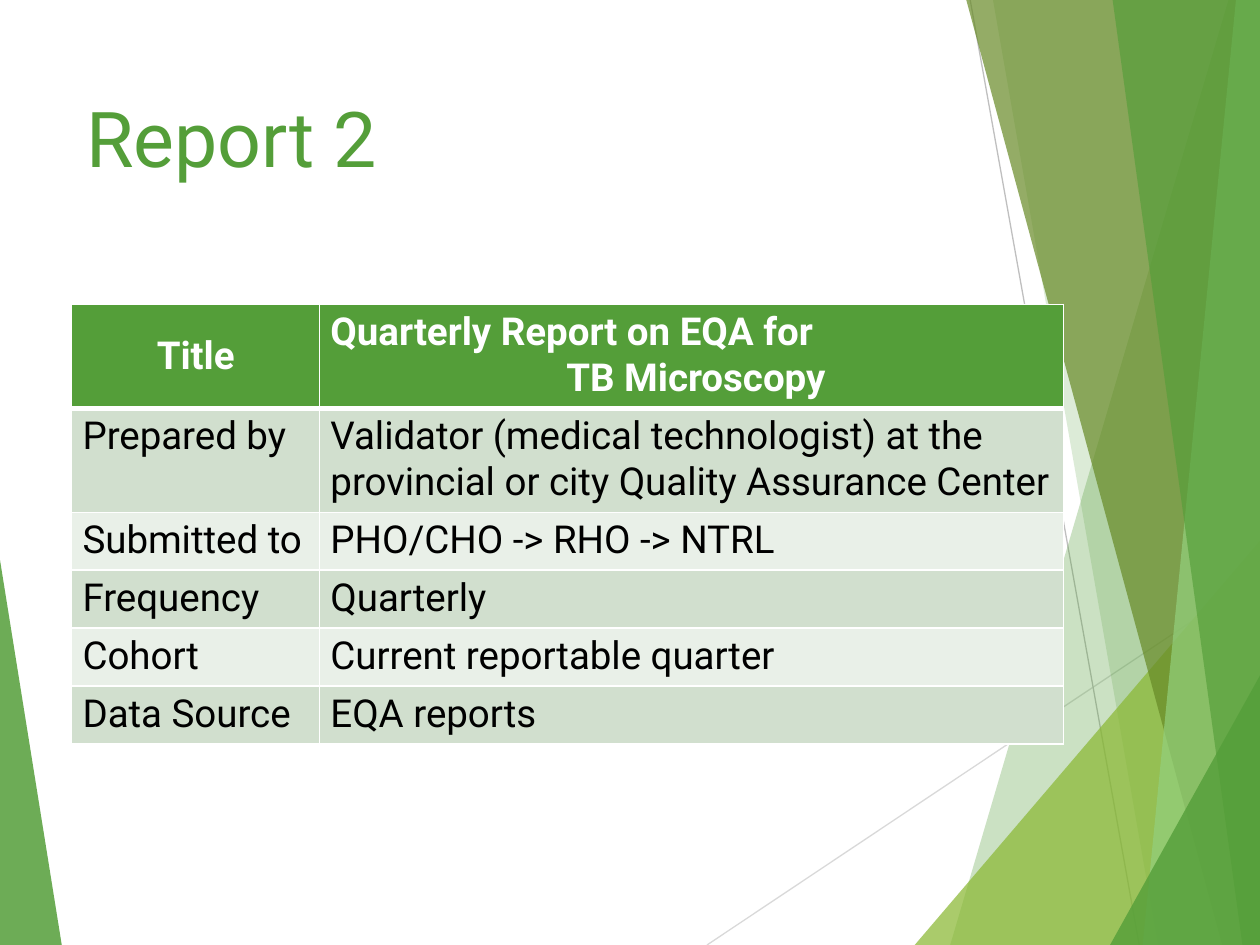
from dataclasses import dataclass

from lxml import etree
from pptx import Presentation
from pptx.dml.color import RGBColor
from pptx.enum.shapes import MSO_CONNECTOR
from pptx.enum.text import MSO_ANCHOR, PP_ALIGN
from pptx.oxml.ns import qn
from pptx.util import Pt

STRAIGHT = MSO_CONNECTOR.STRAIGHT
MIDDLE, TOP = MSO_ANCHOR.MIDDLE, MSO_ANCHOR.TOP
LEFT, CENTER = PP_ALIGN.LEFT, PP_ALIGN.CENTER
WIDTH, HEIGHT = 720, 540


@dataclass(frozen=True)
class Theme:
    font: str = "Roboto"
    title_size: int = 44
    table_size: int = 22
    green: str = "549E39"
    lime: str = "8AB833"
    olive: str = "678A26"
    light_green: str = "93D07D"
    white: str = "FFFFFF"
    black: str = "000000"
    bands: tuple = ("D1DFCE", "E9F0E8")
    light_line: str = "D9D9D9"
    dark_line: str = "BFBFBF"


THEME = Theme()

ROWS = [
    ("Prepared by", "Validator (medical technologist) at the provincial or city Quality Assurance Center"),
    ("Submitted to", "PHO/CHO -> RHO -> NTRL"),
    ("Frequency", "Quarterly"),
    ("Cohort", "Current reportable quarter"),
    ("Data Source", "EQA reports"),
]
COLUMN_WIDTHS = (141.7, 425)
ROW_HEIGHTS = (58.5, 58.5, 33.1, 33.1, 33.1, 33.1)
SIDE_MARGIN, END_MARGIN = 6.2, 3.3


def add_facet(slide, points, color, opacity):
    """Draw a translucent polygon."""
    corners = [(Pt(x), Pt(y)) for x, y in points]
    builder = slide.shapes.build_freeform(*corners[0])
    builder.add_line_segments(corners[1:], close=True)
    shape = builder.convert_to_shape()
    shape.shadow.inherit = False
    shape.fill.solid()
    shape.fill.fore_color.rgb = RGBColor.from_string(color)
    shape.line.fill.background()
    color_element = shape.fill._xPr.find(qn("a:solidFill"))[0]
    etree.SubElement(color_element, qn("a:alpha"), val=str(opacity * 1000))


def add_band(slide, top_x, bottom_x, color, opacity):
    """Draw a facet from a slanted left edge to the right side of the slide."""
    points = [(top_x, 0), (bottom_x, HEIGHT), (WIDTH, HEIGHT), (WIDTH, 0)]
    add_facet(slide, points, color, opacity)


def add_corner(slide, bottom_x, right_y, color, opacity):
    """Draw a triangle in the bottom right corner."""
    points = [(bottom_x, HEIGHT), (WIDTH, right_y), (WIDTH, HEIGHT)]
    add_facet(slide, points, color, opacity)


def add_line(slide, start, end, color):
    line = slide.shapes.add_connector(STRAIGHT, *map(Pt, (*start, *end)))
    line.line.color.rgb = RGBColor.from_string(color)
    line.line.width = Pt(0.75)
    etree.SubElement(line._element.spPr, qn("a:effectLst"))


def format_paragraph(paragraph, size, color, bold=False, alignment=LEFT):
    paragraph.alignment = alignment
    font = paragraph.font
    font.name, font.size, font.bold = THEME.font, Pt(size), bold
    font.color.rgb = RGBColor.from_string(color)


def add_title(slide, text):
    frame = slide.shapes.add_textbox(Pt(42.2), Pt(48.6), Pt(566.6), Pt(59)).text_frame
    frame.word_wrap = True
    frame.vertical_anchor = MIDDLE
    frame.text = text
    format_paragraph(frame.paragraphs[0], THEME.title_size, THEME.green)


def set_borders(cell, bottom_width):
    properties = cell._tc.get_or_add_tcPr()
    widths = {"lnL": 1, "lnR": 1, "lnT": 1, "lnB": bottom_width}
    for position, (side, width) in enumerate(widths.items()):
        border = etree.Element(qn(f"a:{side}"), w=str(Pt(width)))
        fill = etree.SubElement(border, qn("a:solidFill"))
        etree.SubElement(fill, qn("a:srgbClr"), val=THEME.white)
        properties.insert(position, border)


def fill_cell(cell, text, fill, color, alignments=(LEFT,), header=False, anchor=TOP):
    cell.text = text
    cell.vertical_anchor = anchor
    cell.margin_left = cell.margin_right = Pt(SIDE_MARGIN)
    cell.margin_top = cell.margin_bottom = Pt(END_MARGIN)
    cell.fill.solid()
    cell.fill.fore_color.rgb = RGBColor.from_string(fill)
    for paragraph, alignment in zip(cell.text_frame.paragraphs, alignments):
        format_paragraph(paragraph, THEME.table_size, color, header, alignment)
    set_borders(cell, 3 if header else 1)


def add_report_table(slide):
    table = slide.shapes.add_table(
        len(ROW_HEIGHTS), len(COLUMN_WIDTHS), Pt(41), Pt(174),
        Pt(sum(COLUMN_WIDTHS)), Pt(sum(ROW_HEIGHTS)),
    ).table
    for column, width in zip(table.columns, COLUMN_WIDTHS):
        column.width = Pt(width)
    for row, height in zip(table.rows, ROW_HEIGHTS):
        row.height = Pt(height)

    # Header, with the second line of the report name set slightly right of centre
    fill_cell(table.cell(0, 0), "Title", THEME.green, THEME.white, (CENTER,), True, MIDDLE)
    name_cell = table.cell(0, 1)
    fill_cell(name_cell, "Quarterly Report on EQA for\nTB Microscopy",
              THEME.green, THEME.white, (LEFT, CENTER), True)
    second_line = name_cell.text_frame.paragraphs[1]
    second_line._p.get_or_add_pPr().set("marL", str(Pt(5)))

    # Banded body
    for row, texts in enumerate(ROWS, start=1):
        for column, text in enumerate(texts):
            fill_cell(table.cell(row, column), text, THEME.bands[(row - 1) % 2], THEME.black)


def add_decoration(slide):
    add_facet(slide, [(0, 320), (35.3, HEIGHT), (0, HEIGHT)], THEME.green, 85)
    add_line(slide, (404, HEIGHT), (WIDTH, 329), THEME.light_line)
    add_line(slide, (554.4, 0), (651, HEIGHT), THEME.dark_line)
    add_band(slide, 702, 543, THEME.green, 30)
    add_band(slide, 567.4, 661.7, THEME.green, 20)
    add_corner(slide, 522.7, 309, THEME.lime, 72)
    add_band(slide, 552.2, 698.4, THEME.olive, 70)
    add_band(slide, 706.3, 653, THEME.light_green, 70)
    add_band(slide, 635.8, 710, THEME.green, 65)
    add_corner(slide, 634.3, 386, THEME.green, 80)


def main():
    presentation = Presentation()
    presentation.slide_width, presentation.slide_height = Pt(WIDTH), Pt(HEIGHT)
    slide = presentation.slides.add_slide(presentation.slide_layouts[6])
    add_decoration(slide)
    add_title(slide, "Report 2")
    add_report_table(slide)
    presentation.save("out.pptx")


if __name__ == "__main__":
    main()
